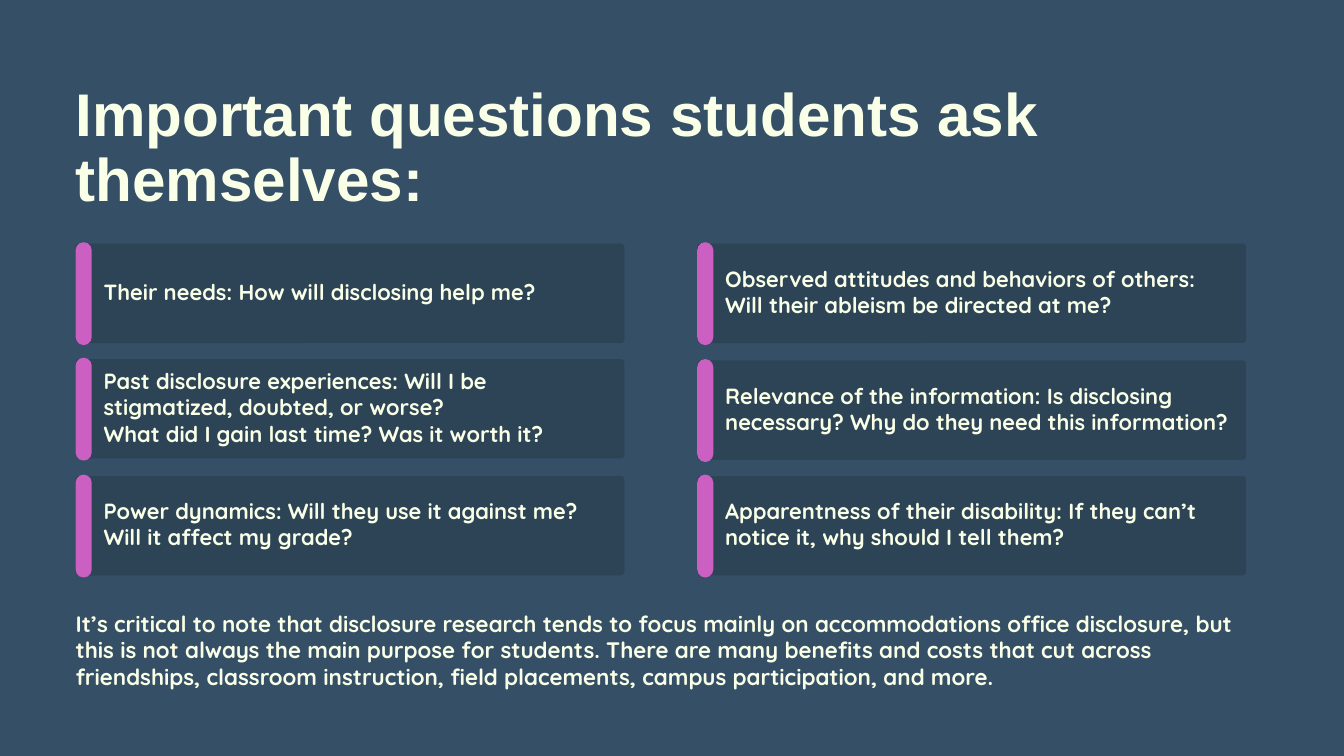
from lxml import etree
from pptx import Presentation
from pptx.dml.color import RGBColor
from pptx.enum.shapes import MSO_SHAPE
from pptx.oxml.ns import qn
from pptx.util import Emu, Pt

ROUNDED = MSO_SHAPE.ROUNDED_RECTANGLE
EMU_PER_PX = 9525
COLORS = {"background": "354F66", "text": "FAFFE7", "card": "000000", "accent": "CC60C2"}

MARGIN = 108
CARD_W, CARD_H, CARD_RADIUS = 784, 142, 5
BAR_W, BAR_H, BAR_OVERHANG = 23, 147, 2
TEXT_INDENT, TEXT_LIFT, LINE_H = 40, 2, 37.6

# Each column: left edge and its cards (top, text width, line count, paragraphs)
COLUMNS = [
    (MARGIN, [
        (348, 705, 1, ["Their needs: How will disclosing help me?"]),
        (513, 725, 3, ["Past disclosure experiences: Will I be stigmatized, doubted, or worse?",
                       "What did I gain last time? Was it worth it?"]),
        (680, 705, 2, ["Power dynamics: Will they use it against me? Will it affect my grade?"]),
    ]),
    (996, [
        (348, 708, 2, ["Observed attitudes and behaviors of others: Will their ableism be directed at me?"]),
        (515, 744, 2, ["Relevance of the information: Is disclosing necessary? "
                       "Why do they need this information?"]),
        (680, 724, 2, ["Apparentness of their disability: If they can’t notice it, "
                       "why should I tell them?"]),
    ]),
]
NOTE = ("It’s critical to note that disclosure research tends to focus mainly on "
        "accommodations office disclosure, but this is not always the main purpose for "
        "students. There are many benefits and costs that cut across friendships, classroom "
        "instruction, field placements, campus participation, and more.")


def px(n):
    return Emu(round(n * EMU_PER_PX))


def color(name):
    return RGBColor.from_string(COLORS[name])


def add_text(s, box, paragraphs, size, line, font="Quicksand"):
    tf = s.shapes.add_textbox(*map(px, box)).text_frame
    tf.margin_left = tf.margin_top = tf.margin_right = tf.margin_bottom = 0
    tf.word_wrap = True
    tf.text = "\n".join(paragraphs)
    for p in tf.paragraphs:
        p.line_spacing = Pt(line)
        for r in p.runs:
            r.font.name = font
            r.font.size = Pt(size)
            r.font.bold = True
            r.font.color.rgb = color("text")


def add_rounded(s, box, radius, fill, opacity=100):
    sp = s.shapes.add_shape(ROUNDED, *map(px, box))
    sp.shadow.inherit = False
    sp.adjustments[0] = radius / min(box[2:])
    sp.fill.solid()
    sp.fill.fore_color.rgb = color(fill)
    sp.line.fill.background()
    if opacity < 100:
        clr = sp.element.spPr.find(qn("a:solidFill"))[0]
        etree.SubElement(clr, qn("a:alpha"), val=str(opacity * 1000))


def add_card(s, box, text_w, lines, paragraphs):
    """Translucent panel with an accent bar and vertically centred text."""
    x, y, w, h = box
    add_rounded(s, box, CARD_RADIUS, "card", 15)
    add_rounded(s, (x, y - BAR_OVERHANG, BAR_W, BAR_H), BAR_W / 2, "accent")
    text_h = round(lines * LINE_H)
    text_y = y + (h - text_h) // 2 - TEXT_LIFT
    add_text(s, (x + TEXT_INDENT, text_y, text_w, text_h), paragraphs, 23.5, 28.2)


def main():
    prs = Presentation()
    prs.slide_width, prs.slide_height = px(1920), px(1080)
    s = prs.slides.add_slide(prs.slide_layouts[6])
    s.background.fill.solid()
    s.background.fill.fore_color.rgb = color("background")

    add_text(s, (MARGIN, 119, 1596, 186), ["Important questions students ask themselves:"],
             64.5, 69.7, "Arial")
    for x, cards in COLUMNS:
        for y, text_w, lines, paragraphs in cards:
            add_card(s, (x, y, CARD_W, CARD_H), text_w, lines, paragraphs)
    add_text(s, (MARGIN, 871, 1704, 115), [NOTE], 24, 28.8)

    prs.save("out.pptx")


if __name__ == "__main__":
    main()
